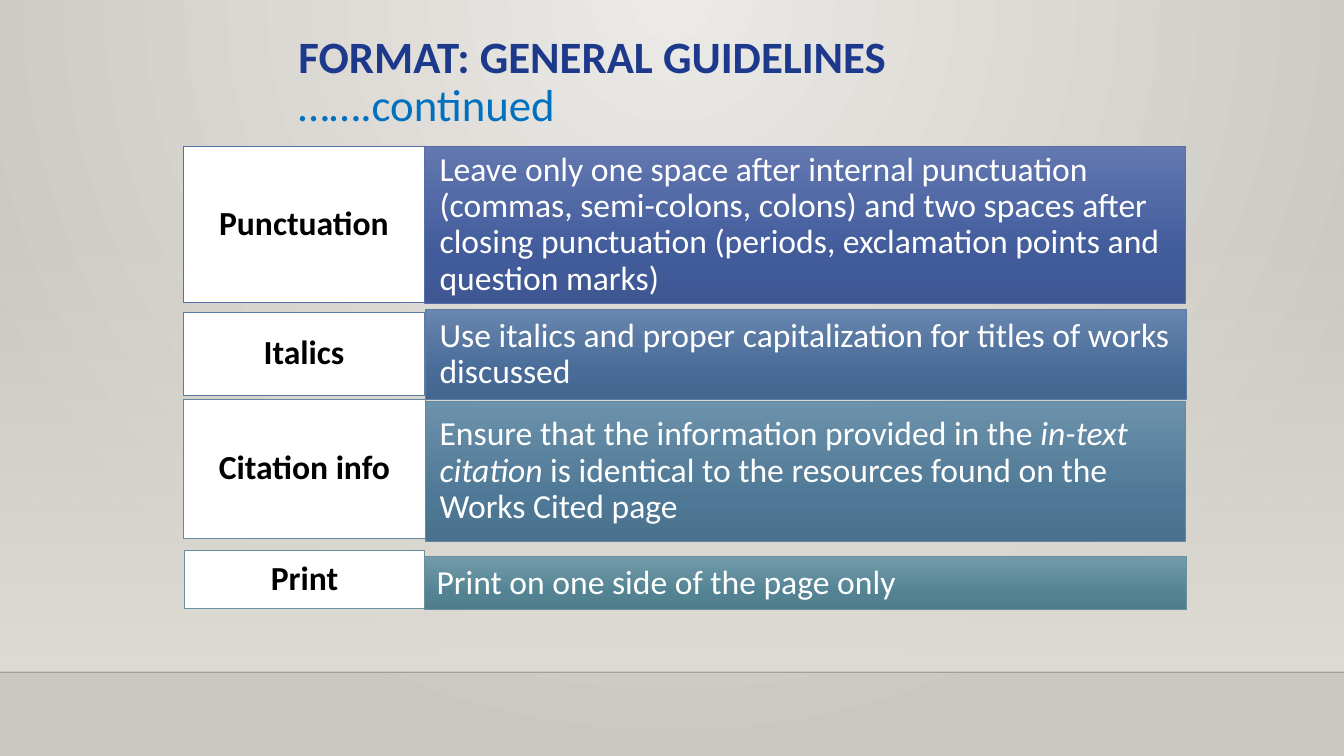
from dataclasses import dataclass

from lxml.etree import SubElement
from pptx import Presentation
from pptx.dml.color import RGBColor
from pptx.enum.shapes import MSO_CONNECTOR, MSO_SHAPE
from pptx.enum.text import MSO_ANCHOR, MSO_AUTO_SIZE, PP_ALIGN
from pptx.oxml import parse_xml
from pptx.oxml.ns import nsdecls, qn
from pptx.util import Inches, Pt

FONT = "Calibri"
COLORS = {
    "title": "1C398C",
    "continued": "0070C0",
    "white": "FFFFFF",
    "black": "000000",
    "floor": "000001",
    "wall": "DFDBD5",
    "light": "ECEAE7",
    "dark": "CAC7C1",
}
LINEAR = '<a:lin ang="5400000" scaled="0"/>'
RADIAL = '<a:path path="circle"><a:fillToRect l="43000" r="43000" b="100000"/></a:path>'


@dataclass(frozen=True)
class Stop:
    pos: int
    color: str
    alpha: int = 100


@dataclass(frozen=True)
class Box:
    left: float
    top: float
    width: float
    height: float


@dataclass(frozen=True)
class Run:
    text: str
    italic: bool = False


@dataclass(frozen=True)
class Guideline:
    label: str
    runs: list[Run]
    label_box: Box
    detail_box: Box
    shades: tuple[str, str, str]
    border: str
    inset: float = 0.14


GUIDELINES = [
    Guideline(
        "Punctuation",
        [Run("Leave only one space after internal punctuation (commas, semi-colons, colons) "
             "and two spaces after closing punctuation (periods, exclamation points and "
             "question marks)")],
        Box(1.82, 1.45, 2.39, 1.55), Box(4.21, 1.45, 7.55, 1.56),
        ("6378B0", "425B9B", "3F5793"), "586EA6", 0.15,
    ),
    Guideline(
        "Italics",
        [Run("Use italics and proper capitalization for titles of works discussed")],
        Box(1.82, 3.1, 2.39, 0.82), Box(4.22, 3.07, 7.55, 0.89),
        ("6886AE", "486B98", "446690"), "5D7CA4",
    ),
    Guideline(
        "Citation info",
        [Run("Ensure that the information provided in the "), Run("in-text citation", True),
         Run(" is identical to the resources found on the Works Cited page")],
        Box(1.82, 3.96, 2.4, 1.38), Box(4.22, 3.98, 7.54, 1.39),
        ("6D92AB", "4E7895", "4A728E"), "6388A2",
    ),
    Guideline(
        "Print",
        [Run("Print on one side of the page only")],
        Box(1.83, 5.46, 2.38, 0.58), Box(4.21, 5.52, 7.56, 0.53),
        ("729BA9", "538393", "4F7C8B"), "6892A0", 0.12,
    ),
]


def rgb(color: str) -> RGBColor:
    return RGBColor.from_string(color)


def set_gradient(fill, props, stops: list[Stop], direction: str = LINEAR) -> None:
    fill.solid()
    gs = "".join(
        f'<a:gs pos="{st.pos * 1000}"><a:srgbClr val="{st.color}">'
        f'<a:alpha val="{st.alpha * 1000}"/></a:srgbClr></a:gs>'
        for st in stops
    )
    grad = parse_xml(
        f'<a:gradFill {nsdecls("a")} rotWithShape="1"><a:gsLst>{gs}</a:gsLst>{direction}</a:gradFill>'
    )
    props.replace(props.find(qn("a:solidFill")), grad)


def add_rect(s, box: Box):
    sp = s.shapes.add_shape(
        MSO_SHAPE.RECTANGLE,
        Inches(box.left), Inches(box.top), Inches(box.width), Inches(box.height),
    )
    sp.shadow.inherit = False
    return sp


def write(sp, runs: list[Run], inset_x: float, inset_y: float, color: str,
          align: PP_ALIGN, bold: bool) -> None:
    tf = sp.text_frame
    tf.word_wrap = True
    tf.vertical_anchor = MSO_ANCHOR.MIDDLE
    tf.margin_left = tf.margin_right = Inches(inset_x)
    tf.margin_top = tf.margin_bottom = Inches(inset_y)
    p = tf.paragraphs[0]
    p.alignment = align
    p.line_spacing = 0.9
    p.font.name = FONT
    p.font.size = Pt(24)
    p.font.bold = bold
    p.font.color.rgb = rgb(color)
    for run in runs:
        r = p.add_run()
        r.text = run.text
        if run.italic:
            r.font.italic = True


def add_guideline(s, g: Guideline) -> None:
    detail = add_rect(s, g.detail_box)
    stops = [Stop(pos, shade) for pos, shade in zip((0, 69, 100), g.shades)]
    set_gradient(detail.fill, detail._element.spPr, stops)
    write(detail, g.runs, g.inset, 0.24, COLORS["white"], PP_ALIGN.LEFT, False)
    label = add_rect(s, g.label_box)
    label.fill.solid()
    label.fill.fore_color.rgb = rgb(COLORS["white"])
    write(label, [Run(g.label)], 0.1, 0.09, COLORS["black"], PP_ALIGN.CENTER, True)
    for sp in (detail, label):
        sp.line.color.rgb = rgb(g.border)
        sp.line.width = Pt(0.75)


def add_backdrop(s) -> None:
    fill = s.background.fill
    fill.solid()
    set_gradient(fill, s._element.find(".//" + qn("p:bgPr")),
                 [Stop(0, COLORS["light"]), Stop(100, COLORS["dark"])], RADIAL)
    wall = add_rect(s, Box(0, 2.2, 13.33, 4.46))
    set_gradient(wall.fill, wall._element.spPr,
                 [Stop(0, COLORS["wall"], 0), Stop(100, COLORS["wall"])])
    wall.line.fill.background()
    floor = s.shapes.add_connector(
        MSO_CONNECTOR.STRAIGHT, Inches(0), Inches(6.67), Inches(13.33), Inches(6.67))
    floor.line.color.rgb = rgb(COLORS["floor"])
    floor.line.width = Pt(1)
    sp_pr = floor._element.spPr
    SubElement(sp_pr.find(".//" + qn("a:srgbClr")), qn("a:alpha"), val="20000")
    SubElement(sp_pr, qn("a:effectLst"))


def set_title(s) -> None:
    title = s.shapes.title
    title.left, title.top = Inches(2.86), Inches(0.29)
    title.width, title.height = Inches(7.88), Inches(1.15)
    tf = title.text_frame
    tf.word_wrap = True
    tf.auto_size = MSO_AUTO_SIZE.NONE
    tf.vertical_anchor = MSO_ANCHOR.TOP
    p = tf.paragraphs[0]
    p.alignment = PP_ALIGN.LEFT
    p.line_spacing = 0.9
    p.font.name = FONT
    p.font.size = Pt(32)
    for text, color, bold in (
        ("FORMAT: GENERAL GUIDELINES ", COLORS["title"], True),
        ("…….continued", COLORS["continued"], False),
    ):
        r = p.add_run()
        r.text = text
        r.font.bold = bold
        r.font.color.rgb = rgb(color)


def main() -> None:
    prs = Presentation()
    prs.slide_width, prs.slide_height = Inches(13.33), Inches(7.5)
    s = prs.slides.add_slide(prs.slide_layouts[5])
    add_backdrop(s)
    set_title(s)
    for g in GUIDELINES:
        add_guideline(s, g)
    prs.save("out.pptx")


if __name__ == "__main__":
    main()
